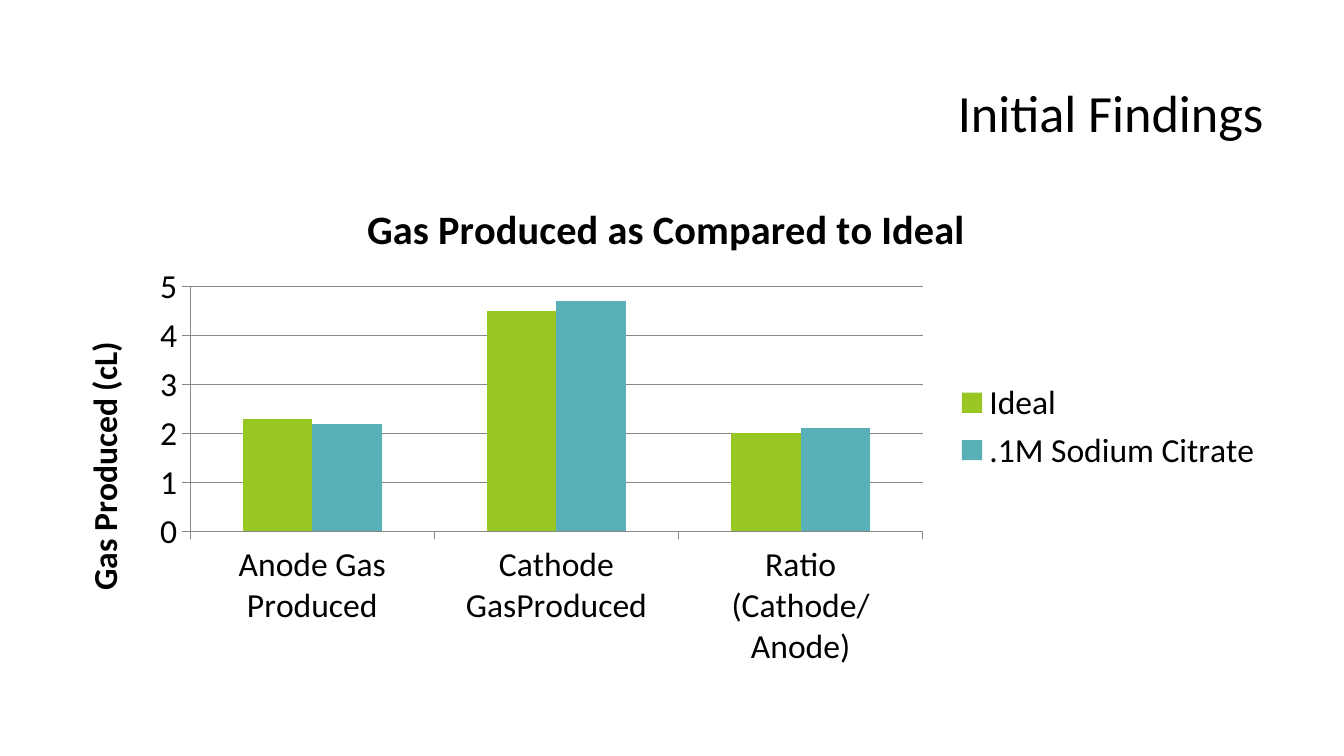
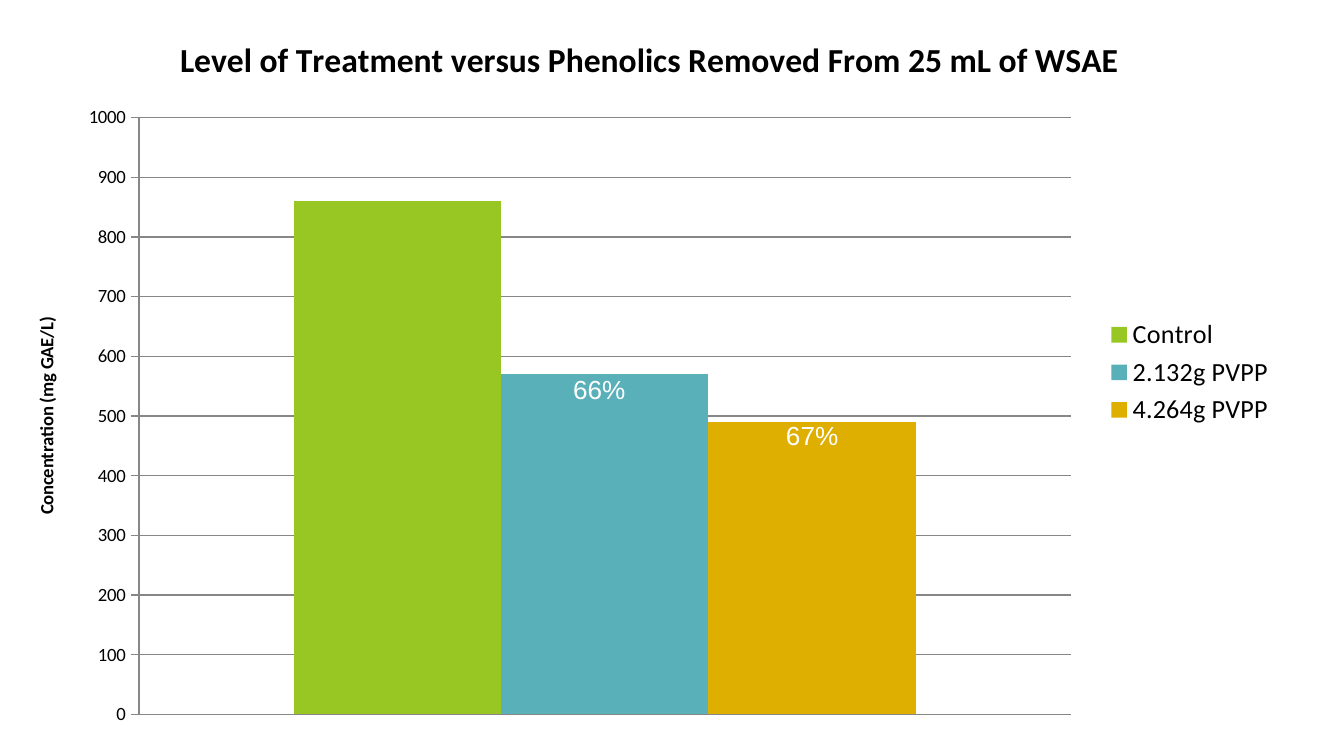
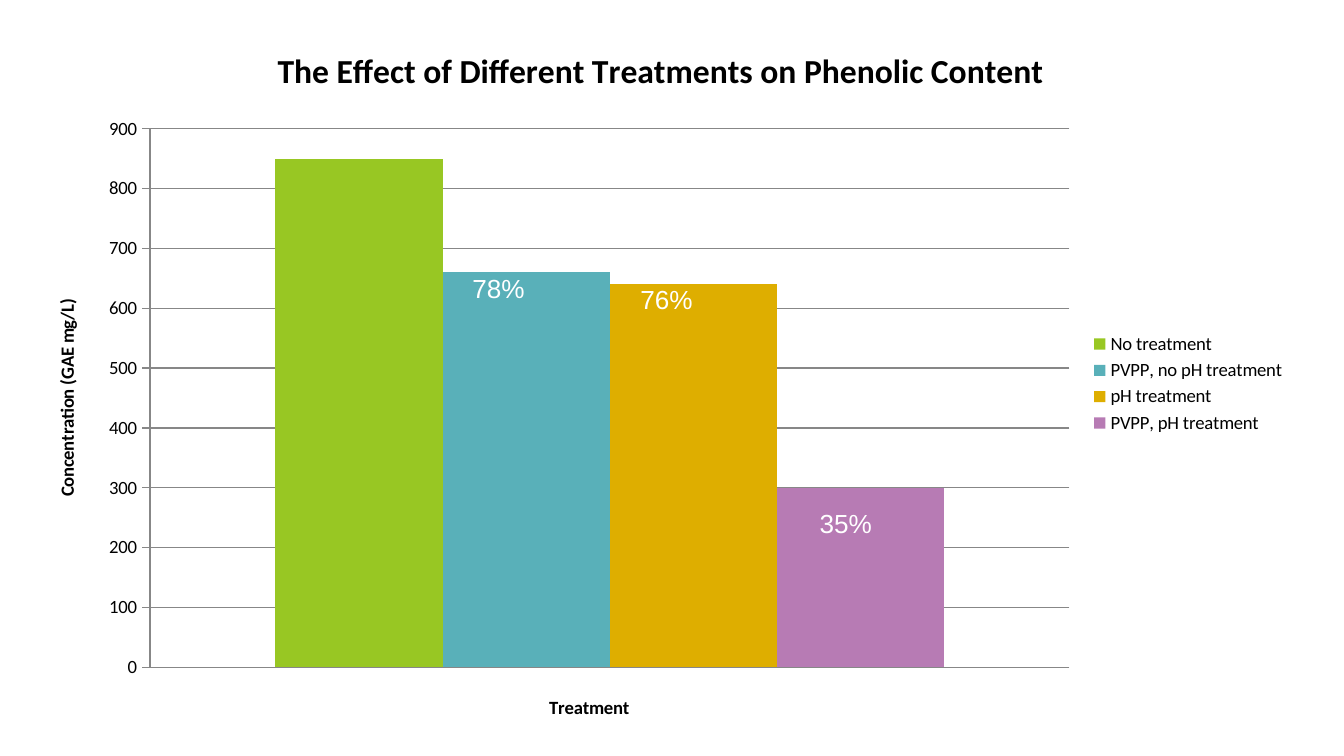
from dataclasses import dataclass

from lxml import etree
from pptx import Presentation
from pptx.chart.data import CategoryChartData
from pptx.dml.color import RGBColor
from pptx.enum.chart import XL_CHART_TYPE, XL_LEGEND_POSITION, XL_TICK_MARK
from pptx.enum.text import MSO_ANCHOR, MSO_AUTO_SIZE, PP_ALIGN
from pptx.oxml.ns import qn
from pptx.util import Pt

COLUMNS = XL_CHART_TYPE.COLUMN_CLUSTERED
RIGHT = XL_LEGEND_POSITION.RIGHT
OUTSIDE = XL_TICK_MARK.OUTSIDE


@dataclass(frozen=True)
class Theme:
    font: str = "Calibri"
    label_font: str = "Arial"
    text: str = "000000"
    label: str = "FFFFFF"
    line: str = "878787"
    series: tuple = ("98C723", "59B0B9", "DEAE00", "B77BB4")
    title_size: float = 28
    label_size: float = 14
    line_width: float = 0.75


THEME = Theme()

SLIDES = [
    {
        "title": "Initial Findings",
        "chart": {
            "box": (30, 94.5, 654, 268),
            "plot": (0.11, 0.22, 0.6, 0.49),
            "title": ("Gas Produced as Compared to Ideal", 21.6),
            "size": 18,
            "legend_size": 18,
            "value_title": "Gas Produced (cL)",
            "scale": (5, 1),
            "categories": ["Anode Gas Produced", "Cathode GasProduced", "Ratio (Cathode/Anode)"],
            "series": [("Ideal", [2.3, 4.5, 2]), (".1M Sodium Citrate", [2.2, 4.7, 2.1])],
        },
        "labels": [],
    },
    {
        "chart": {
            "box": (6, 4.5, 684, 390),
            "plot": (0.1, 0.15, 0.73, 0.82),
            "title": ("Level of Treatment versus Phenolics Removed From 25 mL of WSAE", 18),
            "size": 10,
            "legend_size": 14,
            "value_title": "Concentration (mg GAE/L)",
            "scale": (1000, 100),
            "categories": ["1"],
            "series": [("Control", [860]), ("2.132g PVPP", [570]), ("4.264g PVPP", [490])],
        },
        "labels": [("66%", 300, 196.5), ("67%", 414, 221)],
    },
    {
        "chart": {
            "box": (12, 10.5, 684, 390),
            "plot": (0.1, 0.15, 0.72, 0.74),
            "title": ("The Effect of Different Treatments on Phenolic Content", 18),
            "size": 10,
            "legend_size": 10,
            "value_title": "Concentration (GAE mg/L)",
            "category_title": "Treatment",
            "scale": (900, 100),
            "categories": ["1"],
            "series": [
                ("No treatment", [850]),
                ("PVPP, no pH treatment", [660]),
                ("pH treatment", [640]),
                ("PVPP, pH treatment", [300]),
            ],
        },
        "labels": [("78%", 246, 142.5), ("76%", 336, 148.5), ("35%", 432, 268.5)],
    },
]


def style_font(font, size, color=THEME.text, name=THEME.font, bold=False):
    font.name = name
    font.size = Pt(size)
    font.bold = bold
    font.color.rgb = RGBColor.from_string(color)


def write(tf, text, size, **style):
    p = tf.paragraphs[0]
    r = p.add_run()
    r.text = text
    style_font(r.font, size, **style)
    return p


def style_line(line):
    line.color.rgb = RGBColor.from_string(THEME.line)
    line.width = Pt(THEME.line_width)


def place_plot(chart, plot):
    area = chart.element.find(".//" + qn("c:plotArea"))
    layout = area.find(qn("c:layout"))
    if layout is None:
        layout = etree.Element(qn("c:layout"))
        area.insert(0, layout)
    manual = etree.SubElement(layout, qn("c:manualLayout"))
    settings = [("layoutTarget", "inner"), ("xMode", "edge"), ("yMode", "edge")]
    for tag, value in settings + list(zip("xywh", plot)):
        etree.SubElement(manual, qn("c:" + tag)).set("val", str(value))


def add_title(s, text):
    sp = s.shapes.title
    sp.left, sp.top, sp.width, sp.height = Pt(36), Pt(16.5), Pt(648), Pt(67.5)
    tf = sp.text_frame
    tf.margin_left = tf.margin_right = tf.margin_top = tf.margin_bottom = Pt(7.2)
    tf.vertical_anchor = MSO_ANCHOR.BOTTOM
    write(tf, text, THEME.title_size).alignment = PP_ALIGN.RIGHT


def add_columns(s, spec_data):
    data = CategoryChartData()
    data.categories = spec_data["categories"]
    for name, values in spec_data["series"]:
        data.add_series(name, values)
    box = [Pt(v) for v in spec_data["box"]]
    chart = s.shapes.add_chart(COLUMNS, *box, data).chart
    size = spec_data["size"]
    style_font(chart.font, size)
    title, title_size = spec_data["title"]
    write(chart.chart_title.text_frame, title, title_size, bold=True)
    chart.chart_title.include_in_layout = False

    chart.has_legend = True
    chart.legend.position = RIGHT
    chart.legend.include_in_layout = False
    style_font(chart.legend.font, spec_data["legend_size"])

    plot = chart.plots[0]
    plot.gap_width = 150
    plot.overlap = 0
    plot.vary_by_categories = False
    for series, color in zip(plot.series, THEME.series):
        series.format.fill.solid()
        series.format.fill.fore_color.rgb = RGBColor.from_string(color)

    values, cats = chart.value_axis, chart.category_axis
    values.minimum_scale = 0
    values.maximum_scale, values.major_unit = spec_data["scale"]
    style_line(values.major_gridlines.format.line)
    for axis, key in ((values, "value_title"), (cats, "category_title")):
        axis.major_tick_mark = OUTSIDE
        style_line(axis.format.line)
        if key in spec_data:
            write(axis.axis_title.text_frame, spec_data[key], size, bold=True)
    cats.visible = len(spec_data["categories"]) > 1
    place_plot(chart, spec_data["plot"])


def add_label(s, text, left, top):
    tf = s.shapes.add_textbox(Pt(left), Pt(top), Pt(44.5), Pt(24.5)).text_frame
    tf.word_wrap = True
    tf.auto_size = MSO_AUTO_SIZE.SHAPE_TO_FIT_TEXT
    write(tf, text, THEME.label_size, color=THEME.label, name=THEME.label_font)


def main():
    prs = Presentation()
    prs.slide_width, prs.slide_height = Pt(720), Pt(405)
    title_only, blank = prs.slide_layouts[5], prs.slide_layouts[6]
    for content in SLIDES:
        s = prs.slides.add_slide(title_only if "title" in content else blank)
        if "title" in content:
            add_title(s, content["title"])
        add_columns(s, content["chart"])
        for label in content["labels"]:
            add_label(s, *label)
    prs.save("out.pptx")


if __name__ == "__main__":
    main()
